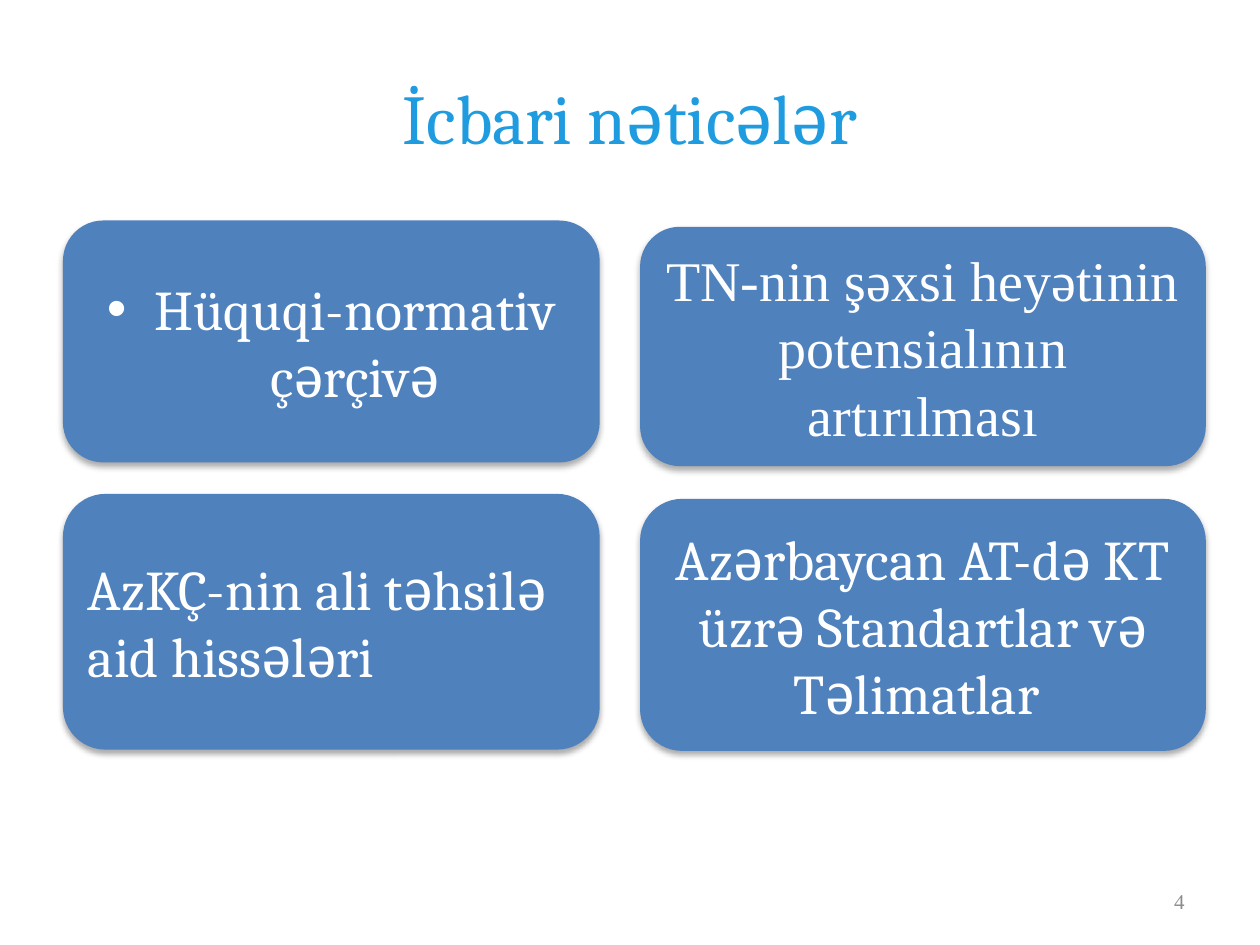
from lxml import etree
from pptx import Presentation
from pptx.dml.color import RGBColor
from pptx.enum.shapes import MSO_SHAPE as SHAPE
from pptx.enum.text import MSO_ANCHOR as ANCHOR, MSO_AUTO_SIZE as AUTO, PP_ALIGN as ALIGN
from pptx.oxml import parse_xml
from pptx.oxml.ns import nsdecls, qn
from pptx.util import Inches, Pt

SERIF, TIMES = "Cambria", "Times New Roman"
BLUE, SKY, WHITE, GREY = "4F81BD", "1F9CE0", "FFFFFF", "8C8C8C"

# Grid: (left, width) of each column; (top, height) of each card in it
COLUMNS = [(0.5, 4.26), (5.08, 4.49)]
ROWS = [[(1.75, 1.92), (3.92, 2.03)], [(1.8, 1.9), (3.96, 2)]]

# Cards: column, row, text, font, alignment
CARDS = [
    (0, 0, "Hüquqi-normativ çərçivə", SERIF, ALIGN.CENTER),
    (1, 0, "TN-nin şəxsi heyətinin potensialının artırılması", TIMES, ALIGN.CENTER),
    (0, 1, "AzKÇ-nin ali təhsilə aid hissələri", SERIF, ALIGN.LEFT),
    (1, 1, "Azərbaycan AT-də KT üzrə Standartlar və Təlimatlar ", SERIF, ALIGN.CENTER),
]


def rgb(color):
    return RGBColor.from_string(color)


def place(sp, left, top, width, height):
    sp.left, sp.top = Inches(left), Inches(top)
    sp.width, sp.height = Inches(width), Inches(height)


def write(sp, text, font, size, color, align):
    tf = sp.text_frame
    tf.text = text
    tf.word_wrap = True
    tf.auto_size = AUTO.NONE
    tf.vertical_anchor = ANCHOR.MIDDLE
    p = tf.paragraphs[0]
    p.alignment = align
    r = p.runs[0]
    r.font.name, r.font.size = font, Pt(size)
    r.font.color.rgb = rgb(color)


def add_shadow(sp):
    sp.shadow.inherit = False
    effects = sp._element.spPr.find(qn("a:effectLst"))
    effects.append(parse_xml(
        f'<a:outerShdw {nsdecls("a")} blurRad="{Pt(3.5)}" dist="{Pt(2.2)}" '
        'dir="5400000" rotWithShape="0"><a:srgbClr val="000000">'
        '<a:alpha val="32000"/></a:srgbClr></a:outerShdw>'))


def round_body(sp):
    """Give the body placeholder rounded corners and no bullet."""
    sp._element.spPr.append(parse_xml(
        f'<a:prstGeom {nsdecls("a")} prst="roundRect"><a:avLst/></a:prstGeom>'))
    pPr = sp.text_frame.paragraphs[0]._p.get_or_add_pPr()
    pPr.set("marL", "0")
    pPr.set("indent", "0")
    etree.SubElement(pPr, qn("a:buNone"))


def style_card(sp, text, font, align):
    sp.fill.solid()
    sp.fill.fore_color.rgb = rgb(BLUE)
    sp.line.fill.background()
    add_shadow(sp)
    write(sp, text, font, 32, WHITE, align)


def main():
    prs = Presentation()
    prs.slide_width, prs.slide_height = Inches(10), Inches(7.5)
    slide = prs.slides.add_slide(prs.slide_layouts[1])
    shapes = slide.shapes

    # Title
    place(shapes.title, 0.5, 0.3, 9, 1.25)
    write(shapes.title, "İcbari nəticələr", SERIF, 40, SKY, ALIGN.CENTER)

    # Cards: the first is the body placeholder
    for col, row, text, font, align in CARDS:
        (left, width), (top, height) = COLUMNS[col], ROWS[col][row]
        if (col, row) == (0, 0):
            sp = slide.placeholders[1]
            place(sp, left, top, width, height)
            round_body(sp)
        else:
            sp = shapes.add_shape(SHAPE.ROUNDED_RECTANGLE, Inches(left), Inches(top),
                                  Inches(width), Inches(height))
        style_card(sp, text, font, align)

    # Slide number
    number = shapes.add_textbox(Inches(7.17), Inches(6.95), Inches(2.33), Inches(0.4))
    write(number, "4", TIMES, 12, GREY, ALIGN.RIGHT)

    prs.save("out.pptx")


if __name__ == "__main__":
    main()
